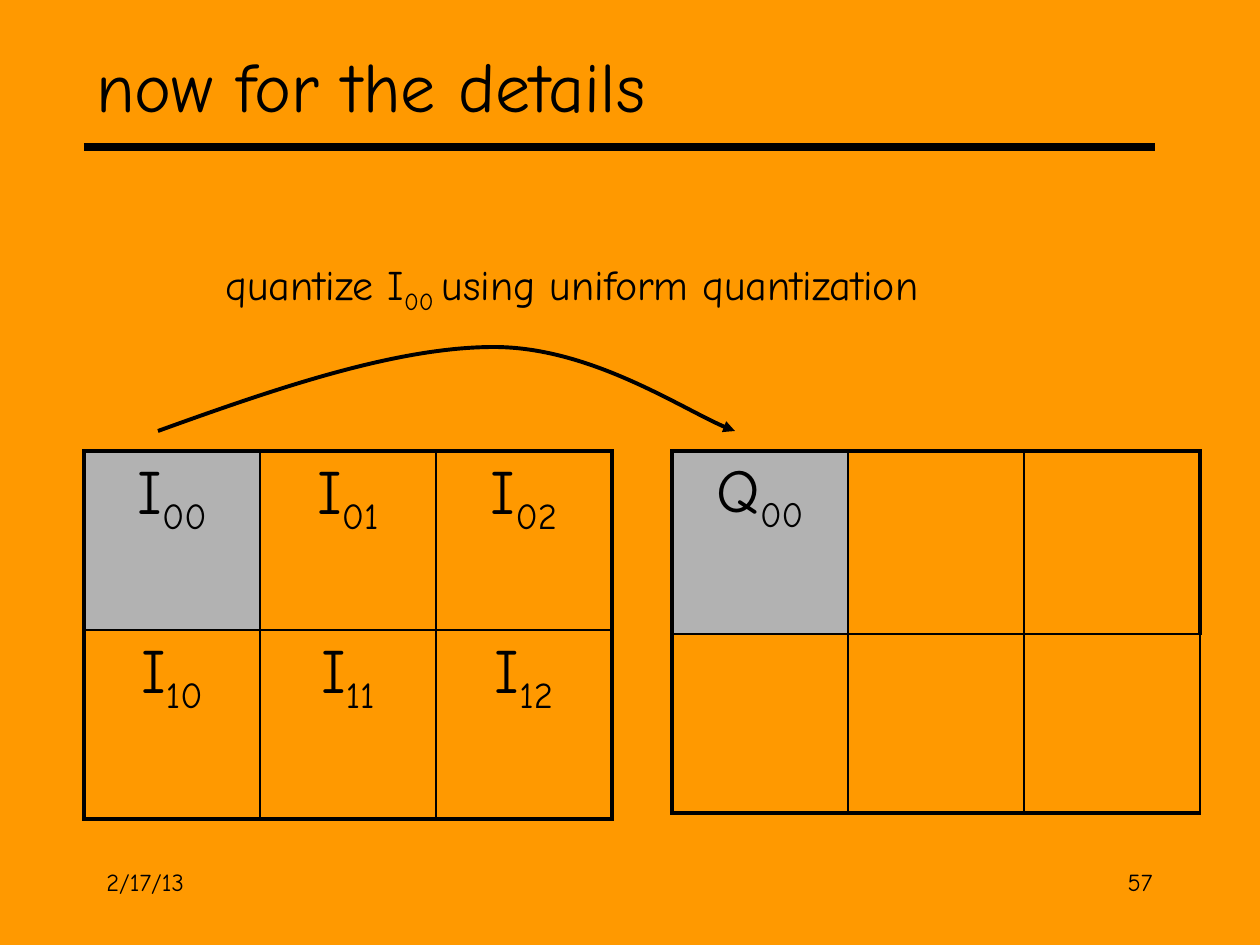
import pptx
import pptx.dml.color
import pptx.enum.shapes
import pptx.enum.text
import pptx.oxml
import pptx.oxml.ns
import pptx.util
import lxml.etree

SCALE = 914400 / 126
COLORS = {"ground": "FF9900", "ink": "000000", "cell": "B2B2B2"}
ALIGN = pptx.enum.text.PP_ALIGN
ANCHOR = pptx.enum.text.MSO_ANCHOR
THIN, THICK = 1, 2.25


def emu(px):
    return pptx.util.Emu(round(px * SCALE))


def color(name):
    return pptx.dml.color.RGBColor.from_string(COLORS[name])


def add_child(parent, tag, **attributes):
    return lxml.etree.SubElement(parent, pptx.oxml.ns.qn(tag), **attributes)


class QuantizeSlide:
    font = "Comic Neue"

    def __init__(self, deck):
        self.slide = deck.slides.add_slide(deck.slide_layouts[6])
        ground = self.slide.background.fill
        ground.solid()
        ground.fore_color.rgb = color("ground")

    def add_pieces(self, paragraph, pieces, size, align):
        paragraph.alignment = align
        for content, subscript in pieces:
            run = paragraph.add_run()
            run.text = content
            style = {"name": self.font, "size": pptx.util.Pt(size)}
            for key, value in style.items():
                setattr(run.font, key, value)
            run.font.color.rgb = color("ink")
            if subscript:
                run.font._element.set("baseline", "-25000")

    def text(self, box, pieces, size, align=ALIGN.LEFT, anchor=ANCHOR.TOP):
        frame = self.slide.shapes.add_textbox(*map(emu, box)).text_frame
        for key, value in {"word_wrap": True, "vertical_anchor": anchor}.items():
            setattr(frame, key, value)
        self.add_pieces(frame.paragraphs[0], pieces, size, align)

    def stroke(self, line, width):
        line.color.rgb = color("ink")
        line.width = pptx.util.Pt(width)

    def rule(self, start, end, width):
        rule = self.slide.shapes.add_connector(
            pptx.enum.shapes.MSO_CONNECTOR.STRAIGHT, *map(emu, start + end))
        self.stroke(rule.line, width)
        add_child(rule._element.spPr, "a:effectLst")

    def curved_arrow(self, start, bends, width):
        builder = self.slide.shapes.build_freeform(*map(emu, start), scale=1.0)
        points = [tuple(map(emu, point)) for bend in bends for point in bend]
        builder.add_line_segments(points, close=False)
        arrow = builder.convert_to_shape()
        arrow.shadow.inherit = False
        arrow.fill.background()
        self.stroke(arrow.line, width)
        add_child(arrow.line._get_or_add_ln(), "a:tailEnd", type="triangle")
        outline = arrow._element.find(".//" + pptx.oxml.ns.qn("a:path"))
        steps = outline.findall(pptx.oxml.ns.qn("a:lnTo"))
        for first in range(0, len(steps), 3):
            curve = add_child(outline, "a:cubicBezTo")
            for step in steps[first:first + 3]:
                curve.append(step[0])
                outline.remove(step)

    def border(self, cell, widths):
        properties = cell._tc.get_or_add_tcPr()
        for position, (side, width) in enumerate(widths.items()):
            edge = pptx.oxml.parse_xml(
                f'<a:ln{side} {pptx.oxml.ns.nsdecls("a")} w="{pptx.util.Pt(width)}">'
                f'<a:solidFill><a:srgbClr val="{COLORS["ink"]}"/></a:solidFill>'
                f'</a:ln{side}>')
            properties.insert(position, edge)

    def matrix(self, left, top, column, heights, labels, size, thin_edges=()):
        rows, columns = len(labels), len(labels[0])
        table = self.slide.shapes.add_table(
            rows, columns, *map(emu, (left, top, column * columns, sum(heights)))).table
        table.first_row = table.horz_banding = False
        for c in range(columns):
            table.columns[c].width = emu(column)
        for r, height in enumerate(heights):
            table.rows[r].height = emu(height)
            for c, label in enumerate(labels[r]):
                cell = table.cell(r, c)
                if (r, c) == (0, 0):
                    cell.fill.solid()
                    cell.fill.fore_color.rgb = color("cell")
                else:
                    cell.fill.background()
                if label:
                    pieces = [(label[0], False), (label[1:], True)]
                    self.add_pieces(cell.text_frame.paragraphs[0], pieces, size,
                                    ALIGN.CENTER)
                outer = {"L": c == 0, "R": c == columns - 1,
                         "T": r == 0, "B": r == rows - 1}
                self.border(cell, {
                    side: THICK if edge and (r, c, side) not in thin_edges else THIN
                    for side, edge in outer.items()})


def main():
    deck = pptx.Presentation()
    deck.slide_width, deck.slide_height = emu(1260), emu(945)
    page = QuantizeSlide(deck)
    page.rule((84, 147), (1155, 147), 4.5)
    page.text((94, 861, 262, 63), [("2/17/13", False)], 14)
    page.text((903, 861, 262, 63), [("57", False)], 14, ALIGN.RIGHT)
    page.text((84, 32, 1071, 105), [("now for the details", False)], 40,
              anchor=ANCHOR.MIDDLE)
    quantized = [["Q00", "", ""], ["", "", ""]]
    page.matrix(672, 451, 176, (183, 179), quantized, 35, {(1, 2, "R")})
    image = [[f"I{r}{c}" for c in range(3)] for r in range(2)]
    page.matrix(84, 451, 176, (179, 189), image, 36)
    page.curved_arrow((158, 431), [[(277, 388), (397, 347), (494, 347)],
                                   [(590, 347), (694, 417), (735, 431)]], 2.25)
    page.text((52, 252, 1040, 63),
              [("quantize I", False), ("00 ", True),
               ("using uniform quantization", False)], 24, ALIGN.CENTER)
    deck.save("out.pptx")


if __name__ == "__main__":
    main()
